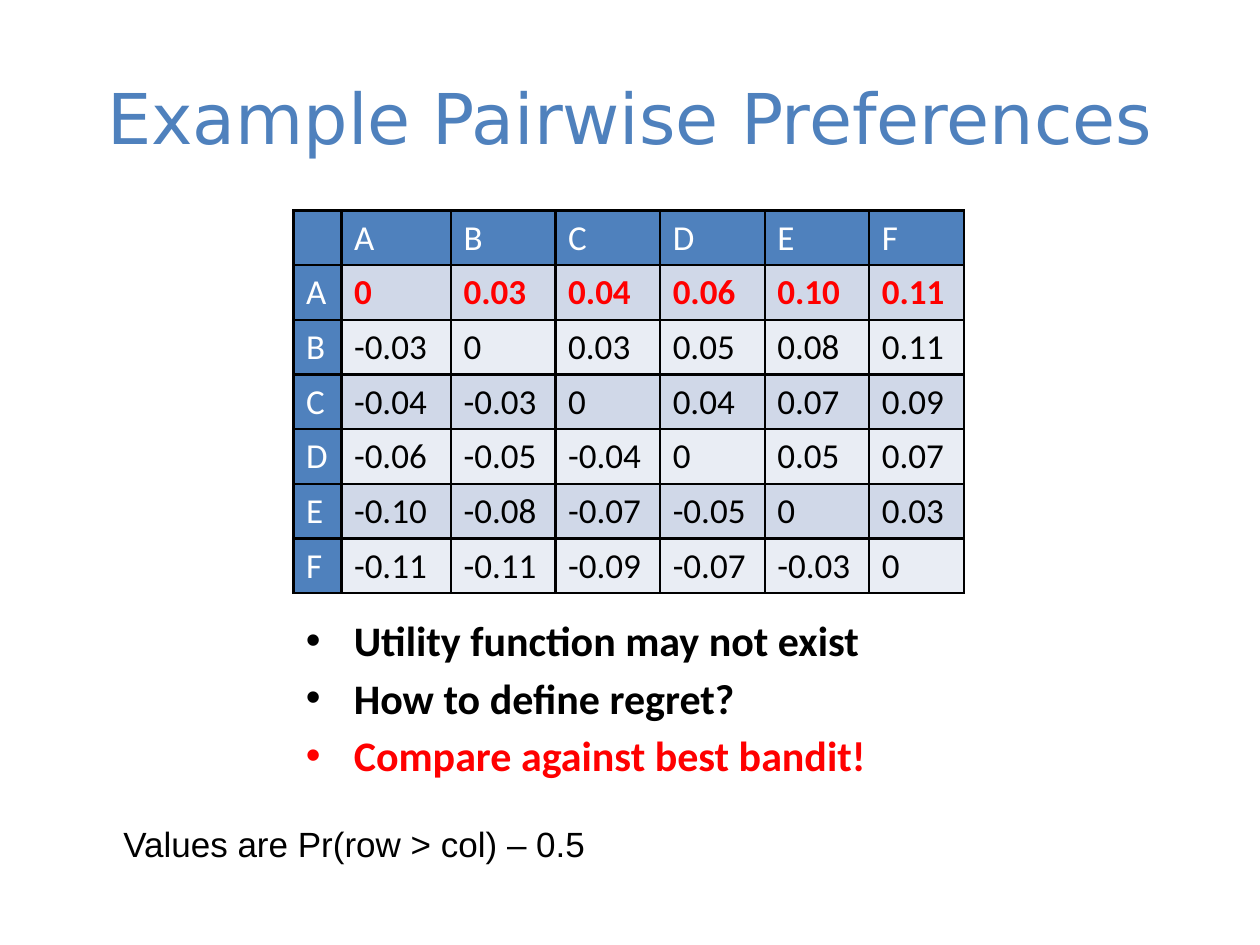
from lxml.etree import SubElement
from pptx import Presentation
from pptx.dml.color import RGBColor
from pptx.enum.text import MSO_ANCHOR, MSO_AUTO_SIZE, PP_ALIGN
from pptx.oxml.ns import qn
from pptx.util import Inches, Pt

COLORS = {
    "blue": "4F81BD", "white": "FFFFFF", "black": "000000", "red": "FF0000",
    "band_dark": "D0D8E8", "band_light": "E9EDF4",
}


def add_run(p, text, font, size, color, bold=False):
    r = p.add_run()
    r.text = text
    r.font.name = font
    r.font.size = Pt(size)
    r.font.bold = bold
    r.font.color.rgb = RGBColor.from_string(COLORS[color])


def add_box(left, top, width, height, wrap=True):
    box = s.shapes.add_textbox(Inches(left), Inches(top), Inches(width), Inches(height))
    box.text_frame.word_wrap = wrap
    return box.text_frame


prs = Presentation()
prs.slide_width, prs.slide_height = Inches(10), Inches(7.5)
s = prs.slides.add_slide(prs.slide_layouts[6])

# Title
tf = add_box(0.5, 0.3, 9, 1.25)
tf.vertical_anchor = MSO_ANCHOR.MIDDLE
p = tf.paragraphs[0]
p.alignment = PP_ALIGN.CENTER
add_run(p, "Example Pairwise Preferences", "DejaVu Sans", 40, "blue")

# Preference table
rows = [
    ["", "A", "B", "C", "D", "E", "F"],
    ["A", "0", "0.03", "0.04", "0.06", "0.10", "0.11"],
    ["B", "-0.03", "0", "0.03", "0.05", "0.08", "0.11"],
    ["C", "-0.04", "-0.03", "0", "0.04", "0.07", "0.09"],
    ["D", "-0.06", "-0.05", "-0.04", "0", "0.05", "0.07"],
    ["E", "-0.10", "-0.08", "-0.07", "-0.05", "0", "0.03"],
    ["F", "-0.11", "-0.11", "-0.09", "-0.07", "-0.03", "0"],
]
col_widths = [0.38, 0.87, 0.83, 0.83, 0.83, 0.83, 0.75]
table = s.shapes.add_table(len(rows), len(col_widths), Inches(2.33), Inches(1.67),
                           Inches(5.33), Inches(3.03)).table
table.first_row = table.horz_banding = False
for col, width in zip(table.columns, col_widths):
    col.width = Inches(width)

for i, row in enumerate(rows):
    table.rows[i].height = Inches(0.43)
    for j, text in enumerate(row):
        cell = table.cell(i, j)
        header = i == 0 or j == 0
        best = i == 1 and not header
        # Borders come before the fill in the cell properties
        tcPr = cell._tc.get_or_add_tcPr()
        for side in ("a:lnL", "a:lnR", "a:lnT", "a:lnB"):
            ln = SubElement(tcPr, qn(side), w=str(Pt(1.5)))
            SubElement(SubElement(ln, qn("a:solidFill")), qn("a:srgbClr"),
                       val=COLORS["black"])
        fill = "blue" if header else "band_dark" if i % 2 else "band_light"
        cell.fill.solid()
        cell.fill.fore_color.rgb = RGBColor.from_string(COLORS[fill])
        if text:
            color = "white" if header else "red" if best else "black"
            add_run(cell.text_frame.paragraphs[0], text, "Calibri", 20, color, best)

# Note on the values
tf = add_box(0.88, 6.48, 3.99, 0.44, wrap=False)
tf.auto_size = MSO_AUTO_SIZE.SHAPE_TO_FIT_TEXT
add_run(tf.paragraphs[0], "Values are Pr(row > col) – 0.5", "Arial", 20, "black")

# Bullets
bullets = [
    ("Utility function may not exist", "black"),
    ("How to define regret?", "black"),
    ("Compare against best bandit!", "red"),
]
tf = add_box(2.33, 4.83, 5.33, 1.72)
for i, (text, color) in enumerate(bullets):
    p = tf.add_paragraph() if i else tf.paragraphs[0]
    if i:
        p.space_before = Pt(4)
    pPr = p._p.get_or_add_pPr()
    pPr.set("marL", str(Inches(0.38)))
    pPr.set("indent", str(-Inches(0.38)))
    SubElement(pPr, qn("a:buFont"), typeface="Arial")
    SubElement(pPr, qn("a:buChar"), char="•")
    add_run(p, text, "Calibri", 24, color, bold=True)

prs.save("out.pptx")
